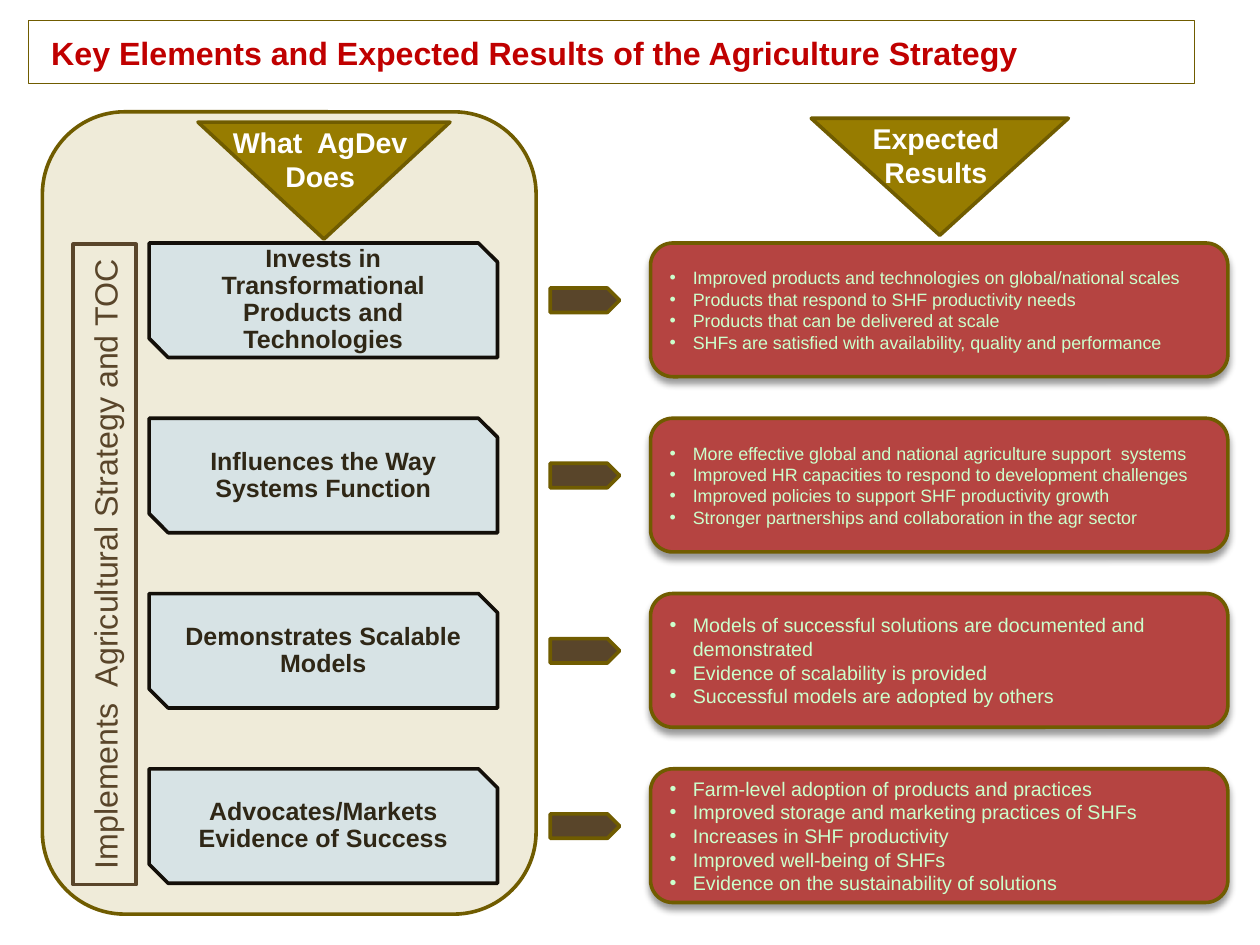
from pptx import Presentation
from pptx.dml.color import RGBColor
from pptx.enum.shapes import MSO_SHAPE
from pptx.enum.text import MSO_ANCHOR, MSO_AUTO_SIZE, PP_ALIGN
from pptx.oxml.ns import qn
from pptx.util import Inches, Pt
from lxml import etree

RECTANGLE = MSO_SHAPE.RECTANGLE
ROUNDED = MSO_SHAPE.ROUNDED_RECTANGLE
TRIANGLE = MSO_SHAPE.FLOWCHART_MERGE
PENTAGON = MSO_SHAPE.PENTAGON
SNIPPED = MSO_SHAPE.SNIP_2_DIAG_RECTANGLE
TOP, MIDDLE = MSO_ANCHOR.TOP, MSO_ANCHOR.MIDDLE
LEFT, CENTER = PP_ALIGN.LEFT, PP_ALIGN.CENTER
FIT_SHAPE = MSO_AUTO_SIZE.SHAPE_TO_FIT_TEXT

FONT = "Arial"
OLIVE, DARK_OLIVE, BROWN = "977C00", "705C00", "59452A"
FIRST_ROW, ROW_PITCH = 1.89, 4.09 / 3

ROWS = [
    ("Invests in Transformational Products and Technologies", 10, [
        "Improved products and technologies on global/national scales",
        "Products that respond to SHF productivity needs",
        "Products that can be delivered at scale",
        "SHFs are satisfied with availability, quality and performance"]),
    ("Influences the Way Systems Function", 10, [
        "More effective global and national agriculture support  systems",
        "Improved HR capacities to respond to development challenges",
        "Improved policies to support SHF productivity growth",
        "Stronger partnerships and collaboration in the agr sector"]),
    ("Demonstrates Scalable Models", 11, [
        "Models of successful solutions are documented and demonstrated",
        "Evidence of scalability is provided",
        "Successful models are adopted by others"]),
    ("Advocates/Markets Evidence of Success", 11, [
        "Farm-level adoption of products and practices",
        "Improved storage and marketing practices of SHFs",
        "Increases in SHF productivity",
        "Improved well-being of SHFs",
        "Evidence on the sustainability of solutions"]),
]


def color(value):
    """Return the colour for a hex string."""
    return RGBColor.from_string(value)


def add_box(shapes, kind, box, fill=None, opacity=100, line=DARK_OLIVE, width=2):
    """Add a preset shape with its fill and outline."""
    shape = shapes.add_shape(kind, *map(Inches, box))
    shape.shadow.inherit = False
    if fill:
        shape.fill.solid()
        shape.fill.fore_color.rgb = color(fill)
        if opacity < 100:
            fill_color = shape._element.spPr.find(qn("a:solidFill"))[0]
            etree.SubElement(fill_color, qn("a:alpha"), val=str(opacity * 1000))
    else:
        shape.fill.background()
    shape.line.color.rgb = color(line)
    shape.line.width = Pt(width)
    return shape


def write_text(shape, lines, size, ink, bold=False, align=CENTER, anchor=MIDDLE,
               spacing=None, wrap=True, bullet_indent=0):
    """Write one paragraph per line into a shape."""
    frame = shape.text_frame
    frame.word_wrap = wrap
    frame.vertical_anchor = anchor
    for index, text in enumerate(lines):
        paragraph = frame.add_paragraph() if index else frame.paragraphs[0]
        paragraph.alignment = align
        if spacing:
            paragraph.line_spacing = spacing
        run = paragraph.add_run()
        run.text = text
        run.font.name = FONT
        run.font.size = Pt(size)
        run.font.bold = bold
        run.font.color.rgb = color(ink)
        if bullet_indent:
            add_bullet(paragraph, bullet_indent)


def add_bullet(paragraph, indent):
    """Give a paragraph a hanging bullet."""
    properties = paragraph._p.get_or_add_pPr()
    properties.set("marL", str(Inches(indent)))
    properties.set("indent", str(-Inches(indent)))
    etree.SubElement(properties, qn("a:buFont"), typeface=FONT)
    etree.SubElement(properties, qn("a:buChar"), char="•")


def add_shadow(shape):
    """Add a soft shadow straight below a shape."""
    effects = shape._element.spPr.find(qn("a:effectLst"))
    shadow = etree.SubElement(effects, qn("a:outerShdw"), blurRad=str(Pt(4)),
                              dist=str(Pt(3)), dir="5400000", rotWithShape="0")
    shade = etree.SubElement(shadow, qn("a:srgbClr"), val="000000")
    etree.SubElement(shade, qn("a:alpha"), val="40000")


def add_label(shapes, box, lines, size, ink, **text_format):
    """Add a bold text box that grows with its text."""
    label = shapes.add_textbox(*map(Inches, box))
    write_text(label, lines, size, ink, bold=True, anchor=TOP, **text_format)
    label.text_frame.auto_size = FIT_SHAPE


def add_heading(slide, triangle_box, label_box, lines):
    """Add a grouped column heading on a downward triangle."""
    group = slide.shapes.add_group_shape()
    add_box(group.shapes, TRIANGLE, triangle_box, OLIVE)
    add_label(group.shapes, label_box, lines, 16, "FFFFFF", wrap=False)


def add_row(slide, top, action, size, results):
    """Add an action, its arrow and its expected results."""
    action_box = add_box(slide.shapes, SNIPPED, (1.16, top, 2.71, 0.89),
                         "D1E2E9", opacity=80, line="130F09")
    write_text(action_box, [action], 14, "2F2716", bold=True, spacing=0.9)
    add_box(slide.shapes, PENTAGON, (4.28, top + 0.35, 0.54, 0.19), BROWN)
    result_box = add_box(slide.shapes, ROUNDED, (5.06, top, 4.49, 1.04), "B54441")
    add_shadow(result_box)
    write_text(result_box, results, size, "CCFFCC", align=LEFT, bullet_indent=0.18)


def main():
    """Build the strategy slide and save it."""
    presentation = Presentation()
    presentation.slide_width = Inches(9.8)
    presentation.slide_height = Inches(7.35)
    slide = presentation.slides.add_slide(presentation.slide_layouts[6])

    add_label(slide.shapes, (0.3, 0.21, 7.72, 0.4),
              ["Key Elements and Expected Results of the Agriculture Strategy"],
              18, "C00000", align=LEFT)
    add_box(slide.shapes, RECTANGLE, (0.22, 0.16, 9.07, 0.49), width=0.25)
    add_box(slide.shapes, ROUNDED, (0.33, 0.87, 3.84, 6.24), OLIVE, opacity=15)
    add_heading(slide, (1.54, 0.95, 1.96, 0.91), (1.7, 0.92, 1.58, 0.64),
                ["What  AgDev", "Does"])
    add_heading(slide, (6.31, 0.92, 2, 0.91), (6.68, 0.89, 1.2, 0.64),
                ["Expected", "Results"])

    strategy_bar = add_box(slide.shapes, RECTANGLE, (0.57, 1.9, 0.49, 4.98), line=BROWN)
    write_text(strategy_bar, ["Implements  Agricultural Strategy and TOC"], 18, BROWN)
    strategy_bar._element.txBody.bodyPr.set("vert", "vert270")

    for index, row in enumerate(ROWS):
        add_row(slide, FIRST_ROW + index * ROW_PITCH, *row)

    presentation.save("out.pptx")


if __name__ == "__main__":
    main()
